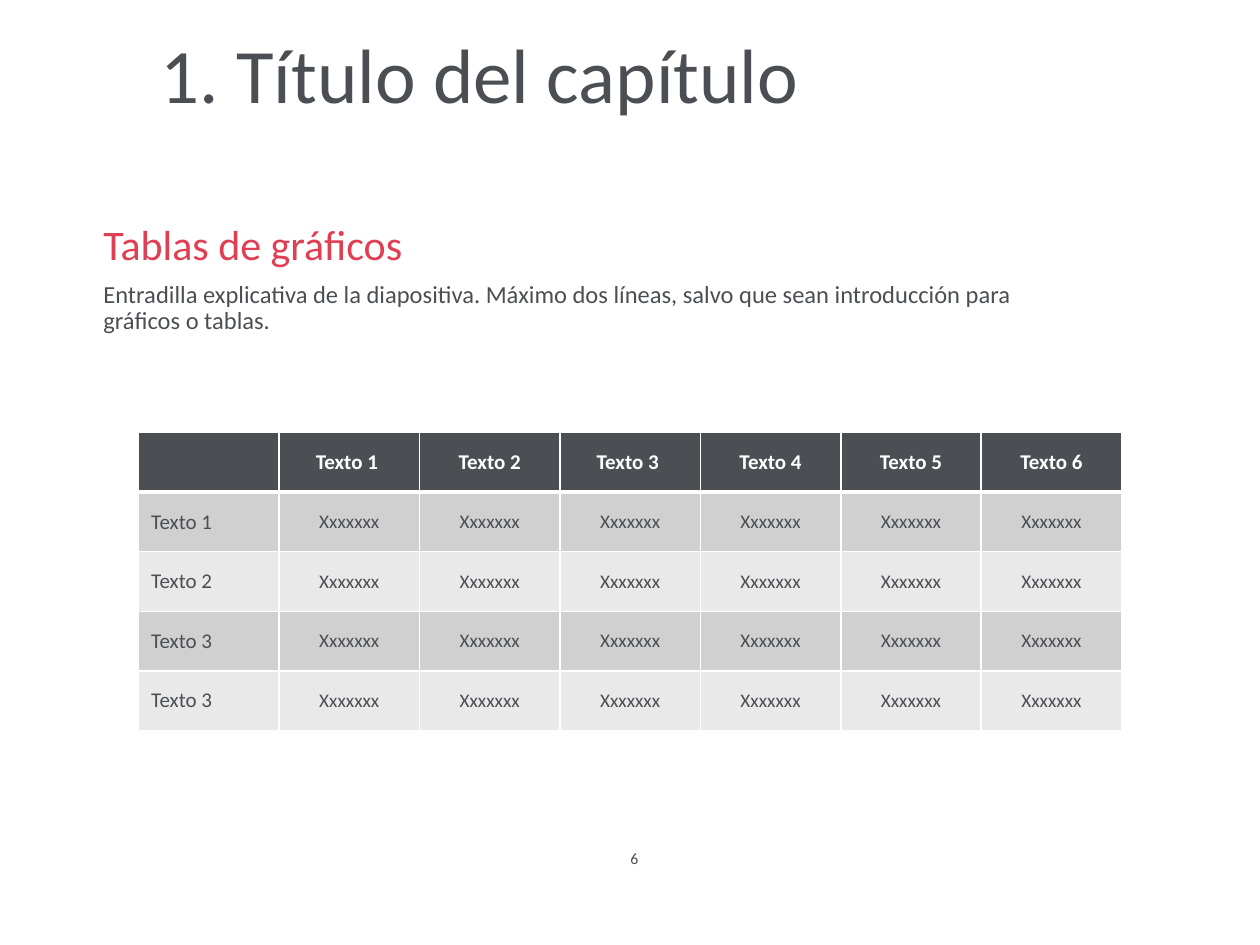
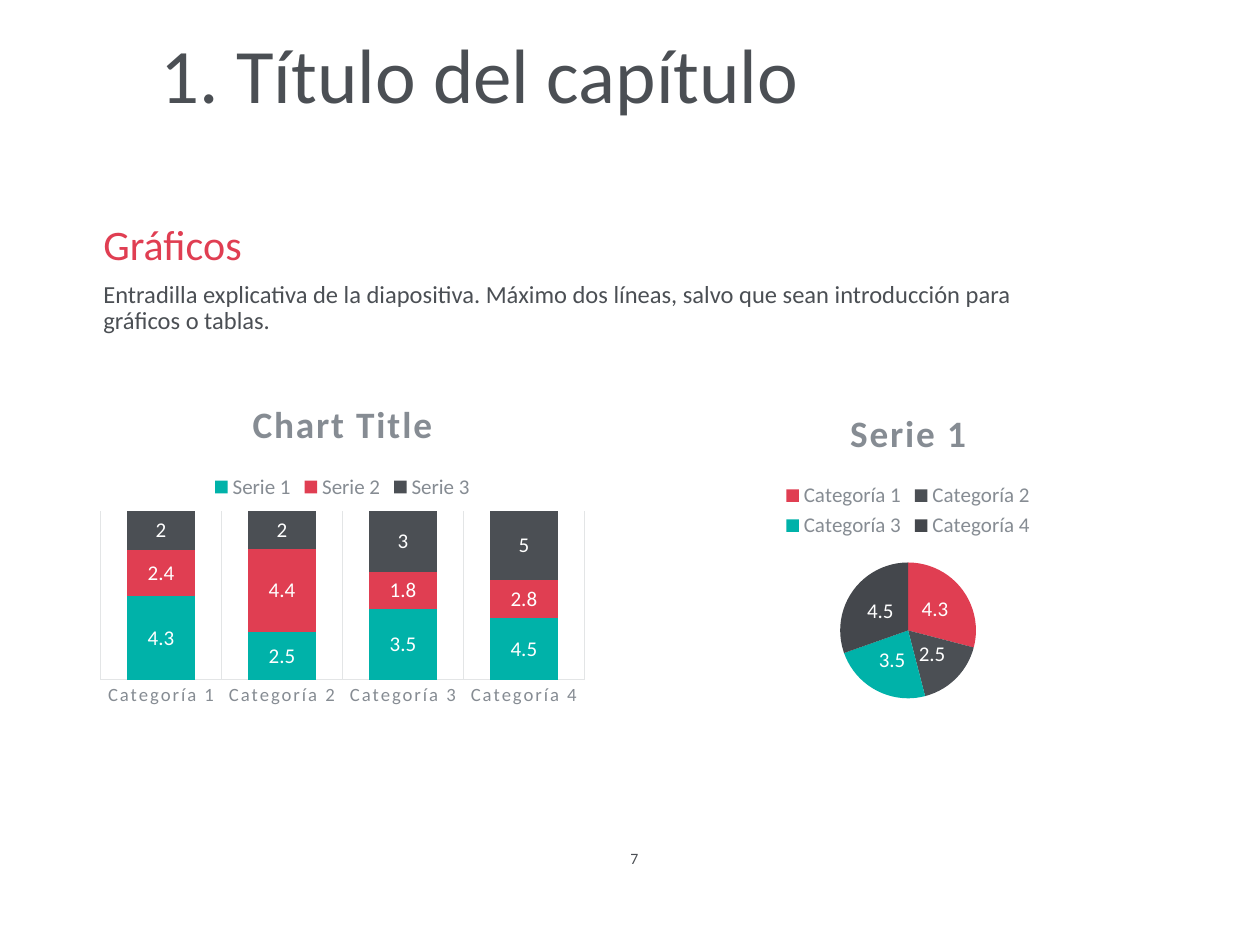
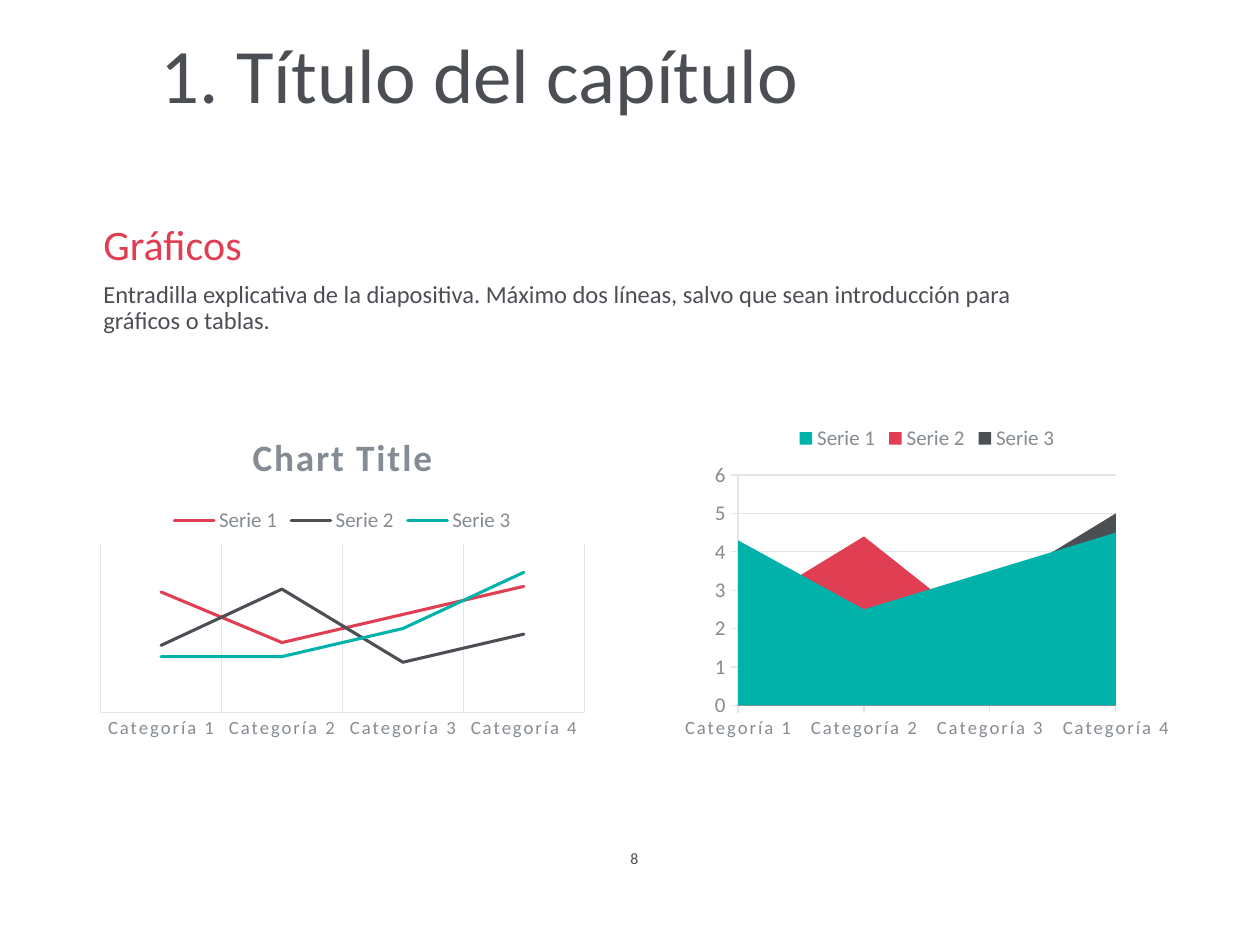
from lxml import etree
from pptx import Presentation
from pptx.chart.data import CategoryChartData
from pptx.dml.color import RGBColor
from pptx.enum import chart as kinds, text
from pptx.oxml import ns
from pptx.util import Pt

# Colours and font
SLATE = RGBColor(0x4B, 0x4F, 0x54)
DARK = RGBColor(0x44, 0x47, 0x4C)
RED = RGBColor(0xE0, 0x3E, 0x52)
TEAL = RGBColor(0x00, 0xB2, 0xA9)
GREY = RGBColor(0x86, 0x8C, 0x93)
RULE = RGBColor(0xE3, 0xE5, 0xE6)
BAND_DARK = RGBColor(0xD0, 0xD0, 0xD1)
BAND_LIGHT = RGBColor(0xE9, 0xE9, 0xE9)
WHITE = RGBColor(0xFF, 0xFF, 0xFF)
FONT = "Calibri"

# Content
TITLE = "1. Título del capítulo"
LEAD = ("Entradilla explicativa de la diapositiva. Máximo dos líneas, "
        "salvo que sean introducción para gráficos o tablas.")
TABLE_HEAD = ["", "Texto 1 ", "Texto 2", "Texto 3 ", "Texto 4", "Texto 5", "Texto 6"]
TABLE_LABELS = ["Texto 1", "Texto 2", "Texto 3", "Texto 3"]
TABLE_VALUE = "Xxxxxxx"

CATEGORIES = ["Categoría 1", "Categoría 2", "Categoría 3", "Categoría 4"]
SCORES = {"Serie 1": (4.3, 2.5, 3.5, 4.5),
          "Serie 2": (2.4, 4.4, 1.8, 2.8),
          "Serie 3": (2, 2, 3, 5)}
TRENDS = {"Serie 1": (86, 50, 70, 90),
          "Serie 2": (48, 88, 36, 56),
          "Serie 3": (40, 40, 60, 100)}
SHARES = {name.replace("Serie", "Series"): values for name, values in SCORES.items()}
SLICES = [(RED, SLATE, TEAL, DARK), (RED,) * 4, (SLATE,) * 4]

PAGES = [
    {"number": 6, "heading": "Tablas de gráficos", "charts": []},
    {"number": 7, "heading": "Gráficos", "charts": [
        {"type": "COLUMN_STACKED_100", "at": (51.7, 216.4), "title": "Chart Title",
         "data": SCORES, "colors": (TEAL, RED, SLATE)},
        {"type": "PIE", "at": (374.9, 221.3), "title": "Serie 1",
         "data": SHARES, "colors": SLICES}]},
    {"number": 8, "heading": "Gráficos", "charts": [
        {"type": "LINE", "at": (51.7, 235.3), "title": "Chart Title",
         "data": TRENDS, "colors": (RED, SLATE, TEAL)},
        {"type": "AREA", "at": (385.7, 235.3), "title": None,
         "data": SCORES, "colors": (TEAL, RED, SLATE)}]},
]

# Layout, in points
TITLE_BOX = (84.6, 17.7, 601.9, 23)
HEADING_BOX = (52, 124.6, 563.8, 33.1)
LEAD_BOX = (52, 157.7, 563.8, 26.6)
NUMBER_BOX = (281.5, 481.3, 162, 28.8)
TABLE_AT = (79.2, 247.1)
CELL_WIDTH, CELL_HEIGHT = 80.27, 34.1
CHART_SIZE = (288, 191.5)


def style(font, size, color, bold=False, spacing=None):
    for name, value in {"name": FONT, "size": Pt(size), "bold": bold}.items():
        setattr(font, name, value)
    font.color.rgb = color
    if spacing:
        font._rPr.set("kern", "1200")
        font._rPr.set("spc", str(spacing))


def write(frame, words, size, color, bold=False, **layout):
    para = frame.paragraphs[0]
    for name, value in layout.items():
        setattr(para, name, value)
    span = para.add_run()
    span.text = words
    style(span.font, size, color, bold)


def add_text(page, place, words, size, color, **layout):
    box = page.shapes.add_textbox(*map(Pt, place))
    box.text_frame.word_wrap = True
    write(box.text_frame, words, size, color, **layout)


def add_borders(cell, widths):
    properties = cell._tc.get_or_add_tcPr()
    for side, width in widths.items():
        line = etree.SubElement(properties, ns.qn("a:ln" + side), w=str(Pt(width)))
        fill = etree.SubElement(line, ns.qn("a:solidFill"))
        etree.SubElement(fill, ns.qn("a:srgbClr"), val=str(WHITE))


def add_grid(page):
    rows = [TABLE_HEAD] + [[label] + [TABLE_VALUE] * 6 for label in TABLE_LABELS]
    columns = len(TABLE_HEAD)
    size = (columns * CELL_WIDTH, len(rows) * CELL_HEIGHT)
    grid = page.shapes.add_table(len(rows), columns, *map(Pt, TABLE_AT + size)).table
    grid.horz_banding = False
    for column in grid.columns:
        column.width = Pt(CELL_WIDTH)
    for r, row in enumerate(rows):
        grid.rows[r].height = Pt(CELL_HEIGHT)
        head = r == 0
        for c, words in enumerate(row):
            cell = grid.cell(r, c)
            cell.vertical_anchor = text.MSO_ANCHOR.MIDDLE
            add_borders(cell, {"L": 1, "R": 1, "T": 3 if r == 1 else 1,
                               "B": 3 if head else 1})
            cell.fill.solid()
            cell.fill.fore_color.rgb = (
                SLATE if head else BAND_DARK if r % 2 else BAND_LIGHT)
            if words:
                label = c == 0
                write(cell.text_frame, words, 12 if head or label else 11,
                      WHITE if head else SLATE, head,
                      alignment=text.PP_ALIGN.LEFT if label else text.PP_ALIGN.CENTER)


def paint(part, color):
    part.format.fill.solid()
    part.format.fill.fore_color.rgb = color


def draw_rule(line):
    line.color.rgb = RULE
    line.width = Pt(0.75)


def format_axes(chart, area):
    across, up = chart.category_axis, chart.value_axis
    style(across.tick_labels.font, 10.64, GREY, spacing=120)
    draw_rule(across.format.line)
    across.has_major_gridlines = not area
    up.has_major_gridlines = area
    up.visible = area
    if area:
        style(up.tick_labels.font, 11.97, GREY)
        draw_rule(up.format.line)
        draw_rule(up.major_gridlines.format.line)
    else:
        across.major_tick_mark = kinds.XL_TICK_MARK.NONE
        draw_rule(across.major_gridlines.format.line)


def add_graph(page, graph):
    kind = graph["type"]
    data = CategoryChartData()
    data.categories = CATEGORIES
    for name, values in graph["data"].items():
        data.add_series(name, values)
    chart = page.shapes.add_chart(getattr(kinds.XL_CHART_TYPE, kind),
                                  *map(Pt, graph["at"] + CHART_SIZE), data).chart
    if kind == "PIE":
        chart.replace_data(data)  # a new pie holds only its first series
    style(chart.font, 10, SLATE)

    # Title and legend
    chart.has_title = bool(graph["title"])
    if graph["title"]:
        span = chart.chart_title.text_frame.paragraphs[0].add_run()
        span.text = graph["title"]
        style(span.font, 21.28, GREY, bold=True, spacing=120)
    chart.has_legend = True
    chart.legend.position = kinds.XL_LEGEND_POSITION.TOP
    chart.legend.include_in_layout = False
    style(chart.legend.font, 11.97, GREY)

    # Series colours
    plot = chart.plots[0]
    plot.vary_by_categories = kind == "PIE"
    for series, color in zip(plot.series, graph["colors"]):
        if kind == "PIE":
            for i, slice_color in enumerate(color):
                paint(series.points[i], slice_color)
        elif kind == "LINE":
            series.smooth = False
            line = series.format.line
            line.color.rgb = color
            line.width = Pt(1.75)
            line._ln.set("cap", "rnd")
        else:
            paint(series, color)

    # Value labels and axes
    if kind in ("COLUMN_STACKED_100", "PIE"):
        for series in plot.series:
            labels = series.data_labels
            labels.show_value = True
            labels.position = kinds.XL_LABEL_POSITION.CENTER
            style(labels.font, 11.97, WHITE)
    if kind == "COLUMN_STACKED_100":
        plot.gap_width, plot.overlap = 79, 100
    if kind != "PIE":
        format_axes(chart, kind == "AREA")


def main():
    deck = Presentation()
    deck.slide_width, deck.slide_height = Pt(720), Pt(540)
    for content in PAGES:
        page = deck.slides.add_slide(deck.slide_layouts[6])
        add_text(page, NUMBER_BOX, str(content["number"]), 9, SLATE,
                 alignment=text.PP_ALIGN.CENTER)
        add_text(page, HEADING_BOX, content["heading"], 24, RED, line_spacing=0.9)
        add_text(page, LEAD_BOX, LEAD, 14, SLATE, line_spacing=0.9)
        for graph in content["charts"]:
            add_graph(page, graph)
        if not content["charts"]:
            add_grid(page)
        add_text(page, TITLE_BOX, TITLE, 44, SLATE, line_spacing=0.9)
    deck.save("out.pptx")


if __name__ == "__main__":
    main()
